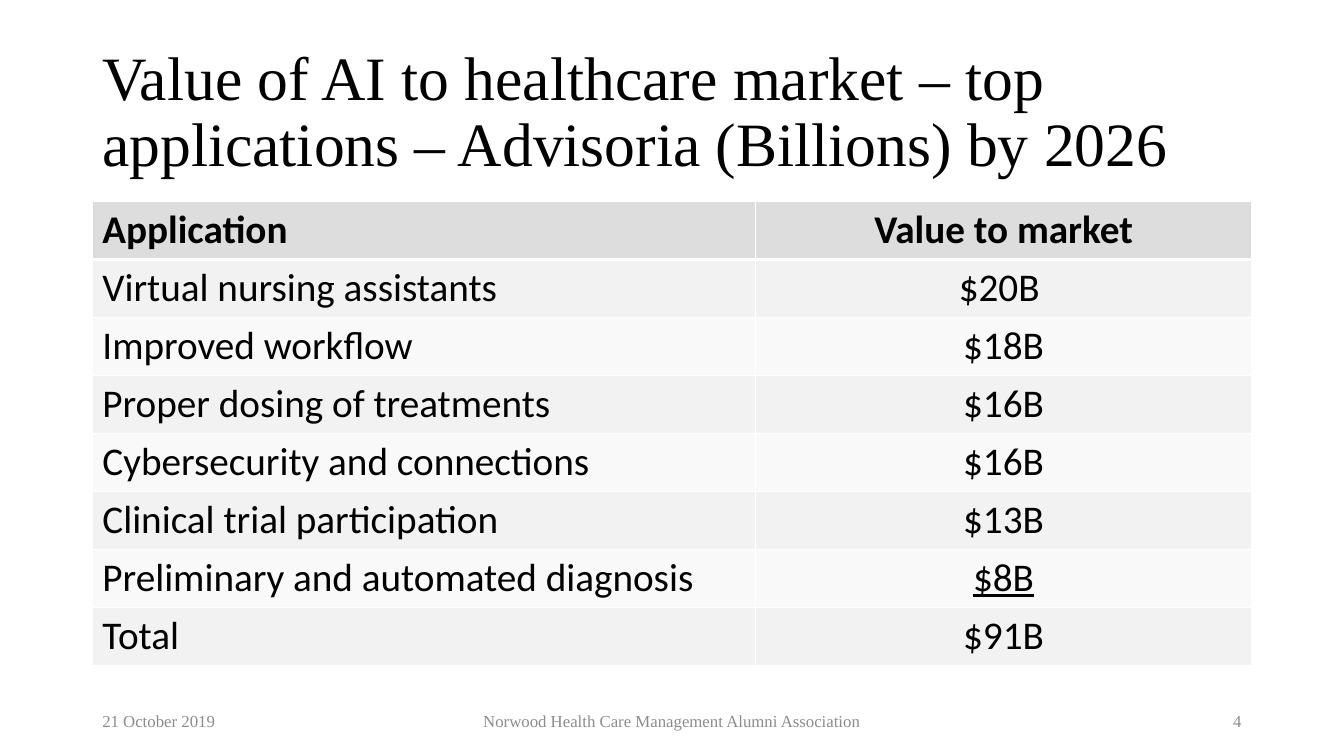
"""Build a slide with a table of AI application values in healthcare."""
import pptx
import pptx.dml.color
import pptx.enum.text
import pptx.oxml
import pptx.oxml.ns
import pptx.util

Pt = pptx.util.Pt
RGBColor = pptx.dml.color.RGBColor
ALIGN = pptx.enum.text.PP_ALIGN
MIDDLE = pptx.enum.text.MSO_ANCHOR.MIDDLE

BLACK = RGBColor(0x00, 0x00, 0x00)
WHITE = RGBColor(0xFF, 0xFF, 0xFF)
GREY = RGBColor(0x8C, 0x8C, 0x8C)
HEADER = RGBColor(0xDD, 0xDD, 0xDD)
BANDS = (RGBColor(0xF9, 0xF9, 0xF9), RGBColor(0xF2, 0xF2, 0xF2))

LEFT, WIDTH = 66, 828
ROW_HEIGHT = 41.4
ROWS = [
    ("Application", "Value to market"),
    ("Virtual nursing assistants", "$20B "),
    ("Improved workflow", "$18B"),
    ("Proper dosing of treatments", "$16B"),
    ("Cybersecurity and connections", "$16B"),
    ("Clinical trial participation", "$13B"),
    ("Preliminary and automated diagnosis", "$8B"),
    ("Total", "$91B"),
]


def write(tf, text, font, size, color=BLACK, align=ALIGN.LEFT, bold=False,
          underline=False, spacing=None):
    p = tf.paragraphs[0]
    p.alignment = align
    if spacing:
        p.line_spacing = spacing
    r = p.add_run()
    r.text = text
    r.font.name = font
    r.font.size = Pt(size)
    r.font.color.rgb = color
    r.font.bold = bold
    r.font.underline = underline


class Deck:
    serif = "Times New Roman"
    sans = "Calibri"

    def __init__(self):
        self.prs = pptx.Presentation()
        self.prs.slide_width, self.prs.slide_height = Pt(960), Pt(540)
        self.s = self.prs.slides.add_slide(self.prs.slide_layouts[6])

    def text(self, text, x, y, w, h, **fmt):
        sp = self.s.shapes.add_textbox(Pt(x), Pt(y), Pt(w), Pt(h))
        tf = sp.text_frame
        tf.word_wrap = True
        tf.vertical_anchor = MIDDLE
        write(tf, text, self.serif, **fmt)

    def border(self, cell, side, width):
        ns = pptx.oxml.ns.nsdecls("a")
        cell._tc.get_or_add_tcPr().append(pptx.oxml.parse_xml(
            f'<a:ln{side} {ns} w="{Pt(width)}"><a:solidFill>'
            f'<a:srgbClr val="{WHITE}"/></a:solidFill></a:ln{side}>'))

    def table(self, rows, x, y, widths, row_height):
        frame = self.s.shapes.add_table(
            len(rows), len(widths), Pt(x), Pt(y),
            Pt(sum(widths)), Pt(row_height * len(rows)))
        table = frame.table
        for col, width in zip(table.columns, widths):
            col.width = Pt(width)
        for i, row in enumerate(rows):
            table.rows[i].height = Pt(row_height)
            edges = {"L": 1, "R": 1, "T": 3 if i == 1 else 1, "B": 3 if i == 0 else 1}
            for j, value in enumerate(row):
                cell = table.cell(i, j)
                for side, width in edges.items():
                    self.border(cell, side, width)
                cell.fill.solid()
                cell.fill.fore_color.rgb = BANDS[i % 2] if i else HEADER
                write(cell.text_frame, value, self.sans, 28, bold=i == 0,
                      align=ALIGN.CENTER if j else ALIGN.LEFT,
                      underline=j == 1 and i == len(rows) - 2)


def main():
    deck = Deck()
    deck.text("Value of AI to healthcare market – top applications – "
              "Advisoria (Billions) by 2026",
              LEFT, 28.8, WIDTH, 104.4, size=44, spacing=0.9)
    deck.table(ROWS, LEFT, 144, (473.76, 354.24), ROW_HEIGHT)
    footers = [
        ("21 October 2019", LEFT, 216, ALIGN.LEFT),
        ("Norwood Health Care Management Alumni Association", 318, 324, ALIGN.CENTER),
        ("4", 678, 216, ALIGN.RIGHT),
    ]
    for text, x, width, align in footers:
        deck.text(text, x, 500.4, width, 28.8, size=12, color=GREY, align=align)
    deck.prs.save("out.pptx")


if __name__ == "__main__":
    main()
